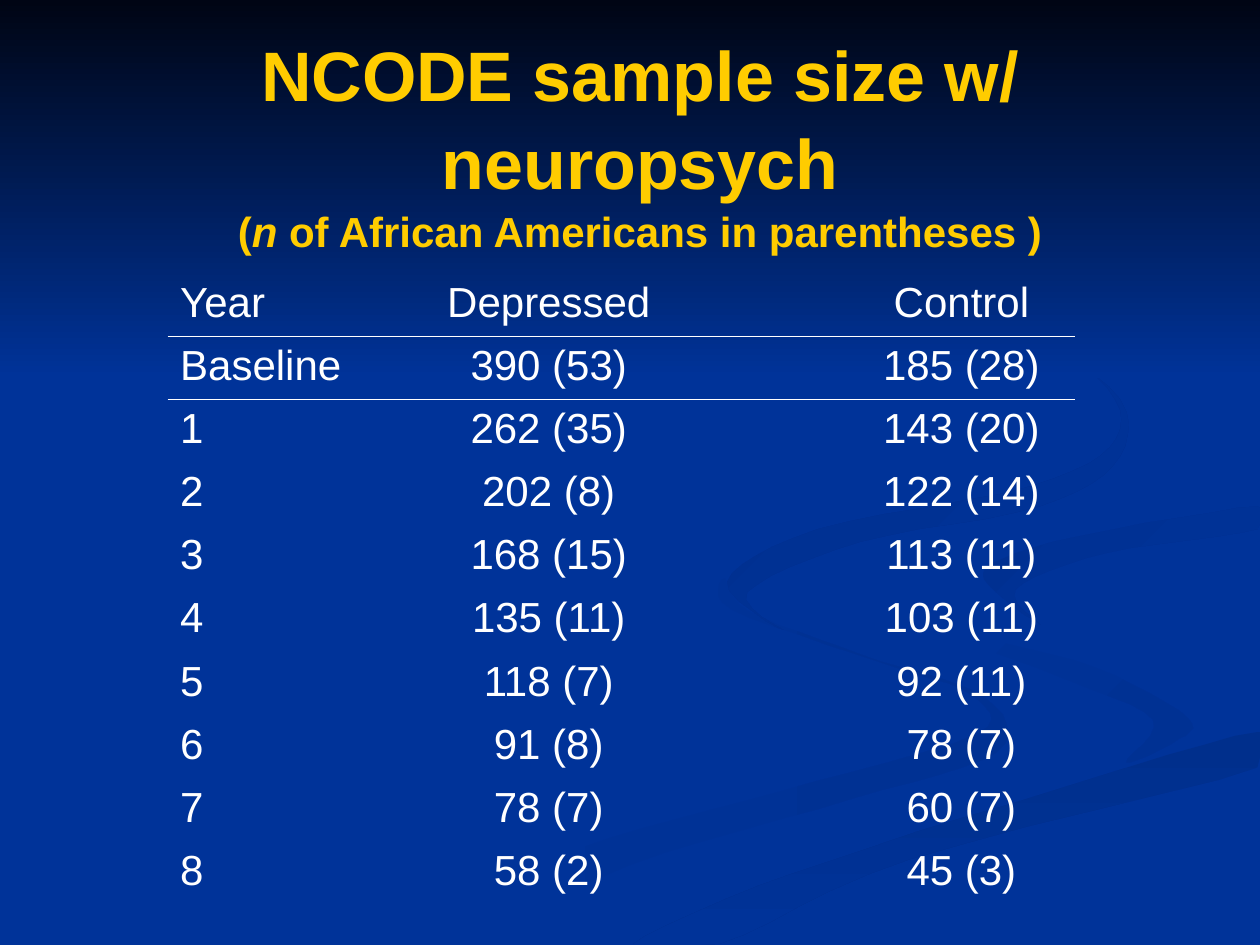
from dataclasses import dataclass

from lxml import etree
from pptx import Presentation
from pptx.dml.color import RGBColor
from pptx.enum.text import MSO_ANCHOR, PP_ALIGN
from pptx.oxml.ns import qn
from pptx.util import Inches, Pt

CENTER, LEFT = PP_ALIGN.CENTER, PP_ALIGN.LEFT
MIDDLE = MSO_ANCHOR.MIDDLE
FONT = "Arial"
NO_TABLE_STYLE = "{2D5ABB26-0587-4C30-8999-92F81FD0307C}"
WIDTH, HEIGHT = 10, 7.5
CURVE_STEPS = 6
COLORS = {
    "blue": "003399",
    "night": "000514",
    "soft": "003193",
    "shade": "002F8C",
    "haze": "003091",
    "curl": "002F8E",
    "title": "FFCC00",
    "text": "FFFFFF",
}
Point = tuple[float, float]


@dataclass
class Ribbon:
    """A closed curve through points in inches, filled from start to end colour."""
    points: list[Point]
    start: str
    end: str
    angle: int = 0


@dataclass
class TitleRun:
    text: str
    size: int
    italic: bool = False


RIBBONS = [
    # Left sweep
    Ribbon([(7.81, 5.53), (6.82, 5.19), (5.94, 4.85), (5.75, 4.59), (5.81, 4.84),
            (6.97, 5.25), (7.7, 5.51), (7.74, 5.83), (6.16, 6.29), (4.58, 6.74),
            (3, 7.49), (3.61, 7.49), (4.99, 6.87), (6.76, 6.34), (7.91, 5.97)],
           "blue", "soft"),
    # Right curl
    Ribbon([(9.43, 5.7), (8.7, 5.3), (7.58, 4.98), (7.24, 4.64), (7.46, 5),
            (8.38, 5.36), (9.15, 5.71), (8.94, 6.05), (9.32, 5.89)],
           "blue", "soft", 45),
    # Lower dark band
    Ribbon([(5.03, 7.49), (5.71, 7.49), (7.22, 6.82), (9.98, 6.09), (9.98, 5.81),
            (8.31, 6.29), (6.3, 6.93)], "shade", "blue", 90),
    # Upper right band
    Ribbon([(7.81, 4.6), (8.26, 4.96), (8.06, 4.68), (8.78, 4.39), (9.98, 4.2),
            (9.98, 4.02), (8.65, 4.24), (7.99, 4.42)], "haze", "blue", 45),
    # Upper curl
    Ribbon([(6.83, 4.3), (8.25, 4.02), (8.89, 3.62), (8.8, 3.07), (7.62, 2.33),
            (8.7, 2.99), (8.86, 3.48), (8.18, 3.86), (6.49, 4.2), (5.77, 4.62),
            (6.22, 5), (5.93, 4.7)], "curl", "blue", 45),
]

TITLE_LINES = [
    [TitleRun("NCODE sample size w/ neuropsych", 40)],
    [TitleRun("(", 24), TitleRun("n ", 24, italic=True),
     TitleRun("of African Americans in parentheses )", 24)],
]

COLUMN_WIDTHS = [1.8, 2.45, 1.15, 1.8]
ROW_HEIGHT = 0.46
SAMPLES = [
    ("Year", "Depressed", "", "Control"),
    ("Baseline", "390 (53)", "", "185 (28)"),
    ("1", "262 (35)", "", "143 (20)"),
    ("2", "202 (8)", "", "122 (14)"),
    ("3", "168 (15)", "", "113 (11)"),
    ("4", "135 (11)", "", "103 (11)"),
    ("5", "118 (7)", "", "92 (11)"),
    ("6", "91 (8)", "", "78 (7)"),
    ("7", "78 (7)", "", "60 (7)"),
    ("8", "58 (2)", "", "45 (3)"),
]


def rgb(name: str) -> RGBColor:
    return RGBColor.from_string(COLORS[name])


def add_run(paragraph, text: str, size: int, color: str, bold=False, italic=False) -> None:
    run = paragraph.add_run()
    run.text = text
    run.font.name, run.font.size = FONT, Pt(size)
    run.font.bold, run.font.italic = bold, italic
    run.font.color.rgb = rgb(color)


def smooth(points: list[Point]) -> list[Point]:
    """Catmull-Rom curve through a closed ring of points, kept on the slide."""
    curve = []
    for index in range(len(points)):
        corners = [points[(index + shift) % len(points)] for shift in (-1, 0, 1, 2)]
        for step in range(CURVE_STEPS):
            t = step / CURVE_STEPS
            x, y = (
                b + t * (c - a + t * (2 * a - 5 * b + 4 * c - d
                                      + t * (3 * (b - c) + d - a))) / 2
                for a, b, c, d in zip(*corners))
            curve.append((min(x, WIDTH), min(y, HEIGHT)))
    return curve


def fill_gradient(shape, start: str, end: str, angle: int) -> None:
    shape.shadow.inherit = False
    shape.line.fill.background()
    shape.fill.gradient()
    shape.fill.gradient_angle = -angle % 360  # counted counter-clockwise
    for stop, color in zip(shape.fill.gradient_stops, (start, end)):
        stop.color.rgb = rgb(color)


def draw_ribbon(slide, ribbon: Ribbon) -> None:
    first, *rest = [(round(x * 100), round(y * 100)) for x, y in smooth(ribbon.points)]
    builder = slide.shapes.build_freeform(*first, scale=Inches(0.01))
    builder.add_line_segments(rest, close=True)
    fill_gradient(builder.convert_to_shape(), ribbon.start, ribbon.end, ribbon.angle)


def draw_night_sky(slide) -> None:
    builder = slide.shapes.build_freeform(0, 0, scale=Inches(1))
    builder.add_line_segments([(0, 3.08), (WIDTH, 3.08), (WIDTH, 0)], close=True)
    fill_gradient(builder.convert_to_shape(), "night", "blue", 90)


def draw_title(slide) -> None:
    box = slide.shapes.add_textbox(Inches(0.58), Inches(0.5), Inches(9), Inches(1.25))
    frame = box.text_frame
    frame.word_wrap, frame.vertical_anchor = True, MIDDLE
    paragraph = frame.paragraphs[0]
    paragraph.alignment, paragraph.line_spacing = CENTER, 1.05
    for index, line in enumerate(TITLE_LINES):
        if index:
            paragraph.add_line_break()
        for run in line:
            add_run(paragraph, run.text, run.size, "title", True, run.italic)


def add_border(cell, side: str) -> None:
    properties = cell._tc.get_or_add_tcPr()
    line = etree.SubElement(properties, qn(f"a:{side}"), w=str(Pt(1)))
    fill = etree.SubElement(line, qn("a:solidFill"))
    etree.SubElement(fill, qn("a:srgbClr"), val=COLORS["text"])


def draw_table(slide) -> None:
    frame = slide.shapes.add_table(
        len(SAMPLES), len(COLUMN_WIDTHS), Inches(1.33), Inches(2.17),
        Inches(sum(COLUMN_WIDTHS)), Inches(ROW_HEIGHT * len(SAMPLES)))
    table = frame.table
    table.first_row = table.horz_banding = False
    table._tbl.tblPr.find(qn("a:tableStyleId")).text = NO_TABLE_STYLE
    for column, width in zip(table.columns, COLUMN_WIDTHS):
        column.width = Inches(width)
    header_rule = {0: "lnB", 1: "lnT"}
    for row, values in enumerate(SAMPLES):
        for column, value in enumerate(values):
            cell = table.cell(row, column)
            if row in header_rule:
                add_border(cell, header_rule[row])
            cell.fill.background()
            if value:
                paragraph = cell.text_frame.paragraphs[0]
                paragraph.alignment = CENTER if column else LEFT
                add_run(paragraph, value, 24, "text")


def main() -> None:
    presentation = Presentation()
    presentation.slide_width, presentation.slide_height = Inches(WIDTH), Inches(HEIGHT)
    slide = presentation.slides.add_slide(presentation.slide_layouts[6])
    slide.background.fill.solid()
    slide.background.fill.fore_color.rgb = rgb("blue")
    for ribbon in RIBBONS:
        draw_ribbon(slide, ribbon)
    draw_night_sky(slide)
    draw_title(slide)
    draw_table(slide)
    presentation.save("out.pptx")


if __name__ == "__main__":
    main()
